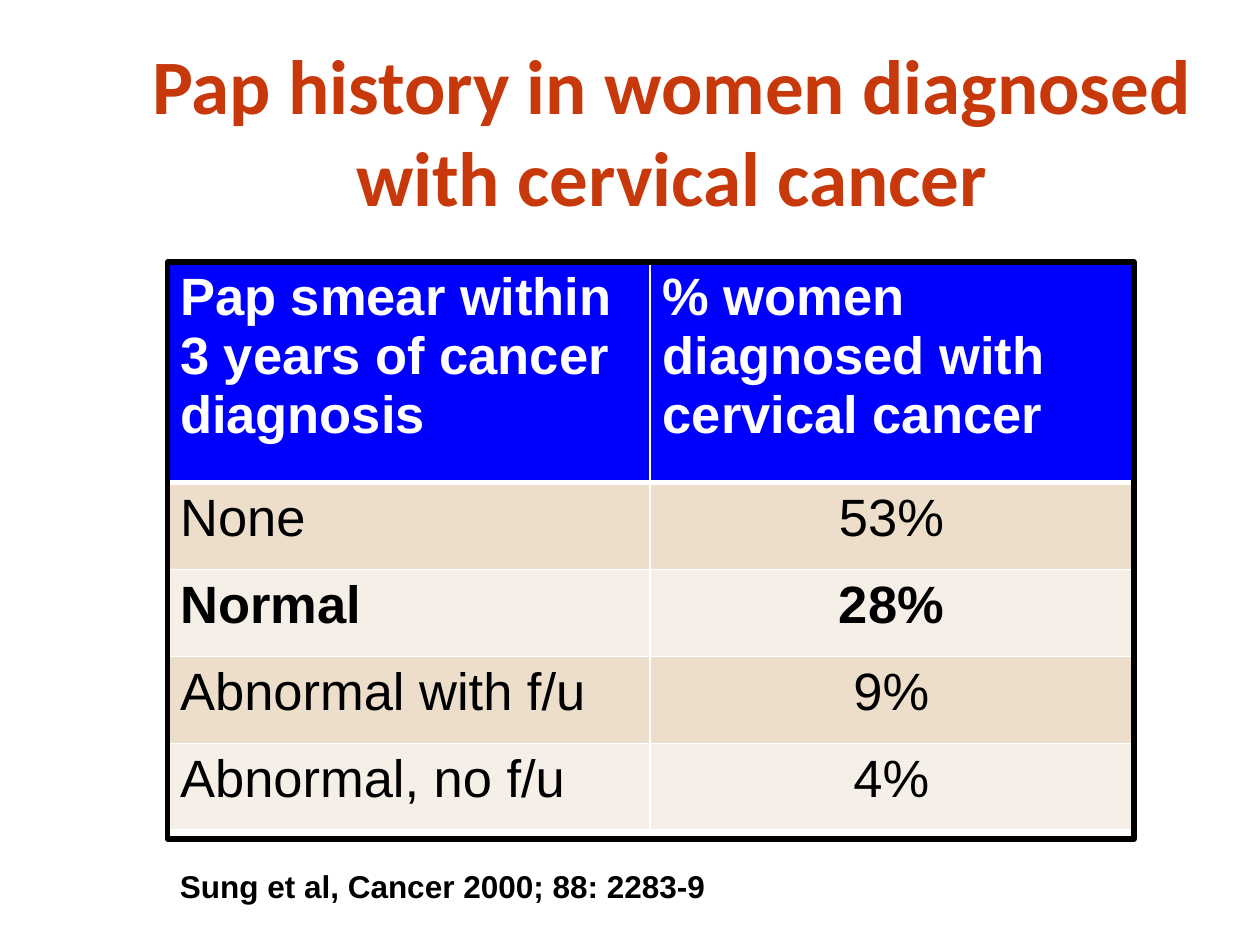
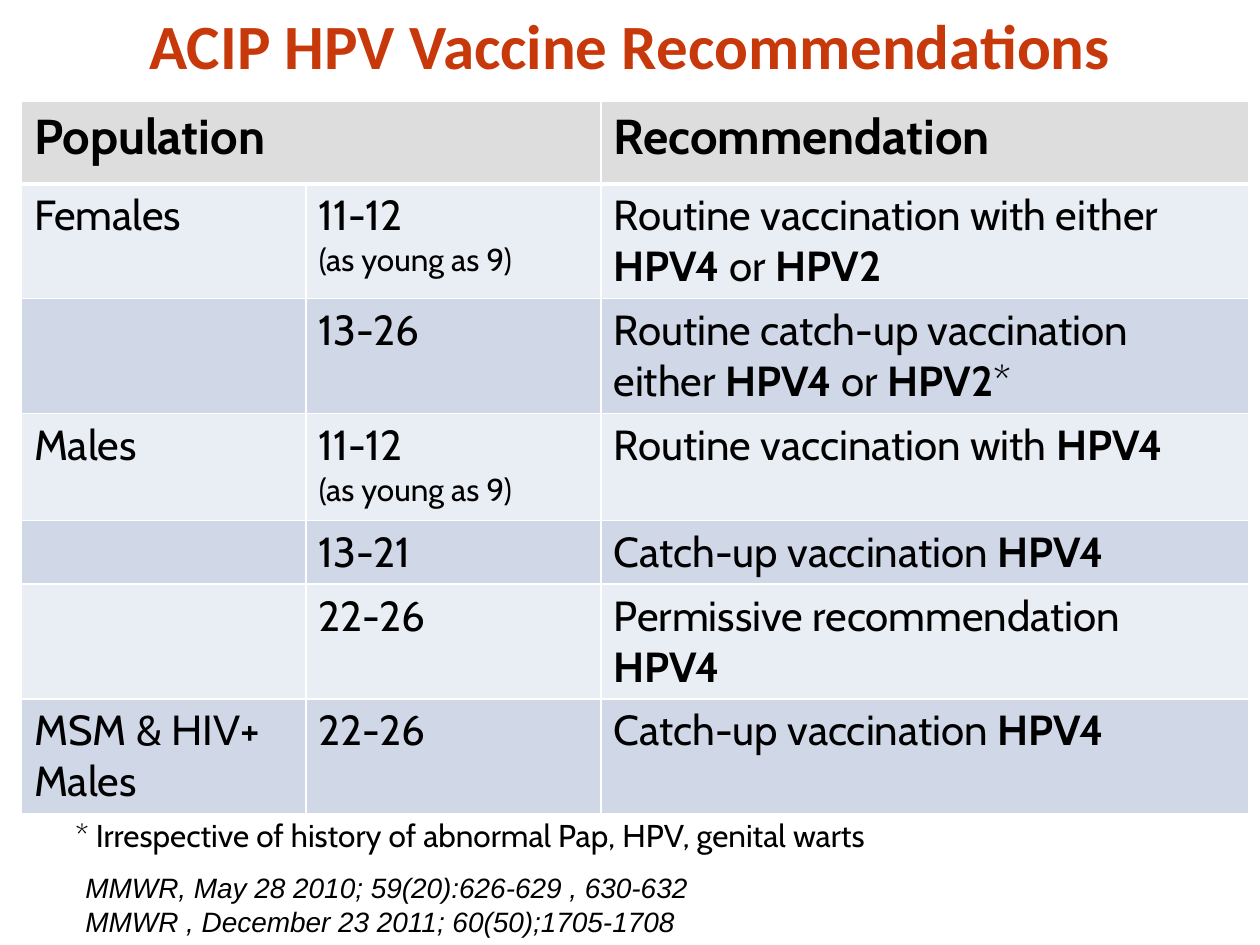
"""Build two slides on cervical cancer screening and HPV vaccination."""
from lxml.etree import SubElement
from pptx import Presentation
from pptx.dml.color import RGBColor as RGB
from pptx.enum.shapes import MSO_SHAPE as Shape
from pptx.enum.text import MSO_ANCHOR as Anchor, MSO_AUTO_SIZE as AutoSize, PP_ALIGN as Align
from pptx.oxml.ns import qn
from pptx.util import Inches, Pt

RUST = RGB(0xC7, 0x38, 0x0B)
BLACK = RGB(0, 0, 0)
WHITE = RGB(255, 255, 255)
BLUE = RGB(0, 0, 255)
GREY = RGB(0xDD, 0xDD, 0xDD)
SAND = (RGB(0xEC, 0xDE, 0xCB), RGB(0xF6, 0xEF, 0xE7))
ICE = (RGB(0xE9, 0xED, 0xF4), RGB(0xD0, 0xD8, 0xE8))

BOLD = "**"
SMALL = 18
THIN, THICK = 1, 3

PAP_HISTORY = dict(
    rows=[
        ("Pap smear within 3 years of cancer diagnosis", "% women diagnosed with cervical cancer"),
        ("None", "53%"),
        ("**Normal**", "**28%**"),
        ("Abnormal with f/u", "9%"),
        ("Abnormal, no f/u", "4%"),
    ],
    left=1.33, top=2.08,
    widths=[3.83] * 2,
    heights=[1.75] + [0.69] * 4,
    font="Arial", sizes=(30, 30),
    head_fill=BLUE, head_color=WHITE, bands=SAND,
    centred=[1],
)

VACCINE = dict(
    rows=[
        ("Population", "", "Recommendation"),
        ("Females", "11-12\n(as young as 9)", "Routine vaccination with either **HPV4** or **HPV2**"),
        ("", "13-26", "Routine catch-up vaccination either **HPV4** or **HPV2***"),
        ("Males", "11-12\n(as young as 9)", "Routine vaccination with **HPV4**"),
        ("", "13-21", "Catch-up vaccination **HPV4**"),
        ("", "22-26", "Permissive recommendation **HPV4**"),
        ("MSM & HIV+ Males", "22-26", "Catch-up vaccination **HPV4**"),
    ],
    left=0.17, top=0.8,
    widths=[2.26, 2.34, 5.14],
    heights=[0.66, 0.89, 0.89, 0.85, 0.5, 0.89, 0.89],
    font="Cabin", sizes=(28, 24),
    head_fill=GREY, head_color=BLACK, bands=ICE,
    centred=[],
)


def style(font, name, size, color, bold=False, italic=False):
    font.name, font.size, font.bold, font.italic = name, Pt(size), bold, italic
    font.color.rgb = color


def add_title(s, text, box, size, anchor):
    title = s.shapes.title
    title.left, title.top, title.width, title.height = map(Inches, box)
    tf = title.text_frame
    tf.text = text
    tf.word_wrap = True
    tf.vertical_anchor = anchor
    p = tf.paragraphs[0]
    p.alignment = Align.CENTER
    style(p.runs[0].font, "Calibri", size, RUST, bold=True)


def add_note(s, text, box, name, size, wrap=False, **look):
    tf = s.shapes.add_textbox(*map(Inches, box)).text_frame
    tf.text = text
    tf.word_wrap = wrap
    tf.auto_size = AutoSize.SHAPE_TO_FIT_TEXT
    for p in tf.paragraphs:
        for r in p.runs:
            style(r.font, name, size, BLACK, **look)


def set_borders(cell, top, bottom):
    tcPr = cell._tc.get_or_add_tcPr()
    for side, width in zip("LRTB", (THIN, THIN, top, bottom)):
        ln = SubElement(tcPr, qn(f"a:ln{side}"), w=str(Pt(width)))
        SubElement(SubElement(ln, qn("a:solidFill")), qn("a:srgbClr"), val=str(WHITE))


def fill_text(cell, text, name, size, color, bold, align):
    tf = cell.text_frame
    for i, line in enumerate(text.split("\n")):
        p = tf.add_paragraph() if i else tf.paragraphs[0]
        p.alignment = align
        for j, part in enumerate(line.split(BOLD)):
            if part:
                r = p.add_run()
                r.text = part
                style(r.font, name, SMALL if i else size, color, bold or j % 2 == 1)


def add_grid(s, rows, left, top, widths, heights, font, sizes,
             head_fill, head_color, bands, centred):
    box = map(Inches, (left, top, sum(widths), sum(heights)))
    table = s.shapes.add_table(len(rows), len(widths), *box).table
    for col, width in zip(table.columns, widths):
        col.width = Inches(width)
    for i, (row, height) in enumerate(zip(rows, heights)):
        table.rows[i].height = Inches(height)
        head = i == 0
        for j, text in enumerate(row):
            cell = table.cell(i, j)
            set_borders(cell, THICK if i == 1 else THIN, THICK if head else THIN)
            cell.fill.solid()
            cell.fill.fore_color.rgb = head_fill if head else bands[(i - 1) % 2]
            align = Align.CENTER if j in centred and not head else Align.LEFT
            fill_text(cell, text, font, sizes[0 if head else 1],
                      head_color if head else BLACK, head, align)
    return table


def add_frame(s, box):
    sp = s.shapes.add_shape(Shape.RECTANGLE, *map(Inches, box))
    sp.shadow.inherit = False
    sp.fill.background()
    sp.line.color.rgb = BLACK
    sp.line.width = Pt(THICK)


def pap_slide(s):
    add_title(s, "Pap history in women diagnosed with cervical cancer",
              (0.67, 0.23, 9.33, 1.6), 44, Anchor.MIDDLE)
    add_note(s, "Sung et al, Cancer 2000; 88: 2283-9",
             (1.33, 6.83, 4.41, 0.4), "Arial", 18, bold=True)
    add_grid(s, **PAP_HISTORY)
    add_frame(s, (1.33, 2.08, 7.67, 4.58))


def vaccine_slide(s):
    add_title(s, "ACIP HPV Vaccine Recommendations", (0, 0, 10, 0.67), 36, Anchor.TOP)
    table = add_grid(s, **VACCINE)
    table.cell(0, 0).merge(table.cell(0, 1))
    add_note(s, "MMWR, May 28 2010; 59(20):626-629 , 630-632\n"
                "MMWR , December 23 2011; 60(50);1705-1708",
             (0.58, 6.86, 6.65, 0.64), "Arial", 16, wrap=True, italic=True)
    add_note(s, "* Irrespective of history of abnormal Pap, HPV, genital warts",
             (0.5, 6.43, 6.98, 0.4), "Cabin", 18)


def main():
    prs = Presentation()
    prs.slide_width, prs.slide_height = Inches(10), Inches(7.5)
    title_only = prs.slide_layouts[5]
    for build in (pap_slide, vaccine_slide):
        build(prs.slides.add_slide(title_only))
    prs.save("out.pptx")


if __name__ == "__main__":
    main()
